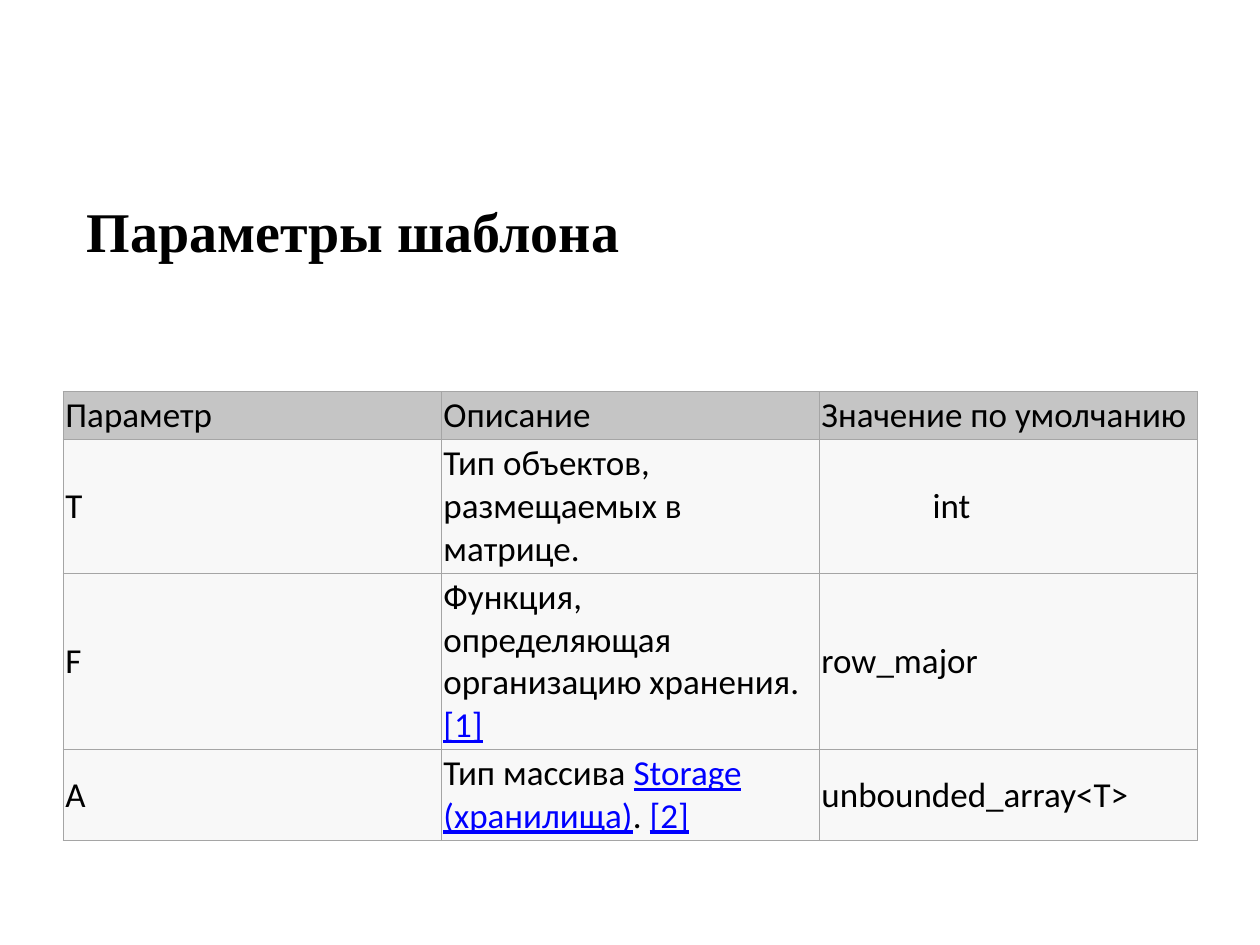
from lxml.etree import SubElement
from pptx import Presentation
from pptx.dml.color import RGBColor
from pptx.enum.text import MSO_ANCHOR
from pptx.oxml.ns import qn
from pptx.util import Cm, Pt

BLACK = RGBColor(0x00, 0x00, 0x00)
LINK_BLUE = RGBColor(0x00, 0x00, 0xFF)
HEADER_GRAY = RGBColor(0xC5, 0xC5, 0xC5)
BODY_GRAY = RGBColor(0xF8, 0xF8, 0xF8)
BORDER_GRAY = RGBColor(0xA5, 0xA5, 0xA5)

# Each cell is a list of text pieces; pieces at odd positions look like links
ROWS = [
    [["Параметр"], ["Описание"], ["Значение по умолчанию"]],
    [["T"], ["Тип объектов, размещаемых в матрице."], ["int"]],
    [["F"], ["Функция, определяющая организацию хранения. ", "[1]"], ["row_major"]],
    [["A"], ["Тип массива ", "Storage (хранилища)", ". ", "[2]"],
     ["unbounded_array<T>"]],
]
ROW_HEIGHTS = [0.95, 2.68, 3.55, 1.81]


def add_borders(cell):
    properties = cell._tc.get_or_add_tcPr()
    for position, side in enumerate(("a:lnL", "a:lnR", "a:lnT", "a:lnB")):
        line = properties.makeelement(qn(side), {"w": str(Pt(0.6))})
        fill = SubElement(line, qn("a:solidFill"))
        SubElement(fill, qn("a:srgbClr"), val=str(BORDER_GRAY))
        properties.insert(position, line)


presentation = Presentation()
presentation.slide_width = Cm(25.4)
presentation.slide_height = Cm(19.05)
slide = presentation.slides.add_slide(presentation.slide_layouts[6])

# Table of template parameters
table = slide.shapes.add_table(
    len(ROWS), 3, Cm(1.27), Cm(7.9), Cm(22.86), Cm(sum(ROW_HEIGHTS))).table
for row, height in zip(table.rows, ROW_HEIGHTS):
    row.height = Cm(height)

for row_index, row_texts in enumerate(ROWS):
    for column_index, pieces in enumerate(row_texts):
        cell = table.cell(row_index, column_index)
        cell.margin_left = cell.margin_right = Cm(0.05)
        cell.margin_top = cell.margin_bottom = Cm(0.05)
        cell.vertical_anchor = MSO_ANCHOR.MIDDLE
        cell.fill.solid()
        cell.fill.fore_color.rgb = BODY_GRAY if row_index else HEADER_GRAY
        add_borders(cell)

        paragraph = cell.text_frame.paragraphs[0]
        paragraph.font.size = Pt(20)
        paragraph.font.name = "Calibri"
        paragraph.font.bold = False
        for piece_index, piece in enumerate(pieces):
            run = paragraph.add_run()
            run.text = piece
            is_link = piece_index % 2 == 1
            run.font.color.rgb = LINK_BLUE if is_link else BLACK
            run.font.underline = is_link

# The default type is set further in
table.cell(1, 2).margin_left = Cm(2.29)

# Title
title = slide.shapes.add_textbox(Cm(1.5), Cm(3.91), Cm(11.35), Cm(2.36))
title.text_frame.margin_top = Cm(0.05)
title.text_frame.word_wrap = False
paragraph = title.text_frame.paragraphs[0]
paragraph.text = "Параметры шаблона"
paragraph.font.size = Pt(32)
paragraph.font.name = "Times New Roman"
paragraph.font.bold = True
paragraph.font.color.rgb = BLACK

presentation.save("out.pptx")
